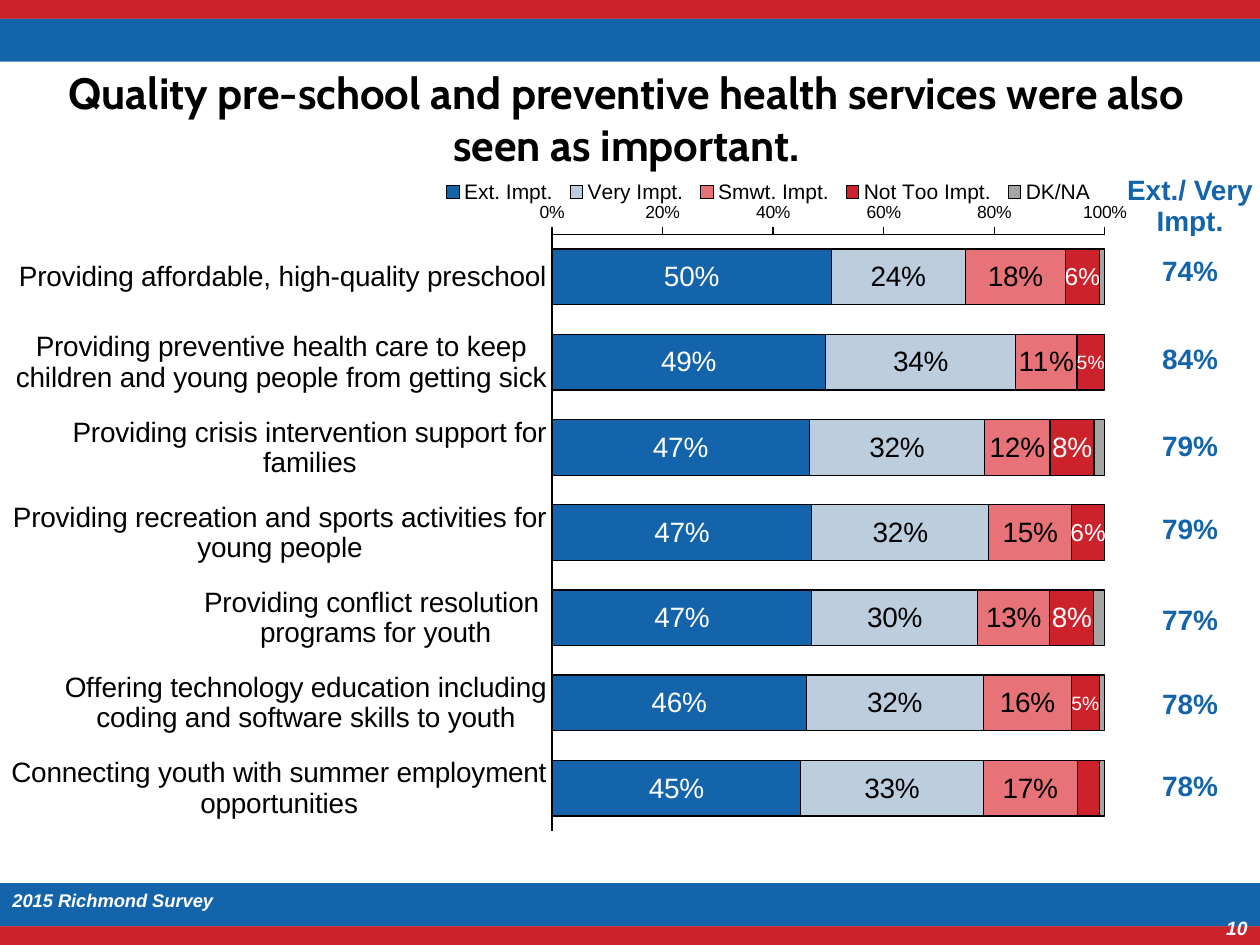
from lxml import etree
from pptx import Presentation
from pptx.chart.data import CategoryChartData
from pptx.dml.color import RGBColor
from pptx.enum.chart import (XL_AXIS_CROSSES, XL_CHART_TYPE, XL_LABEL_POSITION,
                             XL_LEGEND_POSITION, XL_TICK_MARK)
from pptx.enum.shapes import MSO_SHAPE
from pptx.enum.text import MSO_ANCHOR, PP_ALIGN
from pptx.oxml.ns import qn
from pptx.util import Pt

RECT = MSO_SHAPE.RECTANGLE
LEFT, CENTER, RIGHT = PP_ALIGN.LEFT, PP_ALIGN.CENTER, PP_ALIGN.RIGHT
BOTTOM = MSO_ANCHOR.BOTTOM
STACKED = XL_CHART_TYPE.BAR_STACKED_100
MIDDLE = XL_LABEL_POSITION.CENTER
TOP = XL_LEGEND_POSITION.TOP
NONE, OUT = XL_TICK_MARK.NONE, XL_TICK_MARK.OUTSIDE
MAX = XL_AXIS_CROSSES.MAXIMUM

RED, BLUE, WHITE, BLACK = "CC222B", "1464AC", "FFFFFF", "000000"

ITEMS = [
    "Providing affordable, high-quality preschool",
    "Providing preventive health care to keep children and young people from getting sick",
    "Providing crisis intervention support for families",
    "Providing recreation and sports activities for young people",
    "Providing conflict resolution \nprograms for youth",
    "Offering technology education including coding and software skills to youth",
    "Connecting youth with summer employment opportunities",
]
SERIES = [
    ("Ext. Impt.", BLUE, WHITE, (0.5, 0.49, 0.47, 0.47, 0.47, 0.46, 0.45)),
    ("Very Impt.", "BCCDDE", BLACK, (0.24, 0.34, 0.32, 0.32, 0.3, 0.32, 0.33)),
    ("Smwt. Impt.", "E77379", BLACK, (0.18, 0.11, 0.12, 0.15, 0.13, 0.16, 0.17)),
    ("Not Too Impt.", RED, WHITE, (0.06, 0.05, 0.08, 0.06, 0.08, 0.05, 0.04)),
    ("DK/NA", "A5A5A5", None, (0.01, 0, 0.02, 0, 0.02, 0.01, 0.01)),
]
SMALL = {0: 14, 1: 11, 3: 14, 5: 11}
TOTALS = [("Ext./ Very Impt.", 52), ("74%", 29), ("84%", 50), ("79%", 50),
          ("79%", 47), ("77%", 52), ("78%", 48), ("78%", 47)]


def tint(code):
    return RGBColor.from_string(code)


def place(parent, index, inner, **box):
    for old in parent.findall(qn("c:layout")):
        parent.remove(old)
    layout = etree.Element(qn("c:layout"))
    manual = etree.SubElement(layout, qn("c:manualLayout"))
    if inner:
        etree.SubElement(manual, qn("c:layoutTarget")).set("val", "inner")
    for side in "xy":
        etree.SubElement(manual, qn(f"c:{side}Mode")).set("val", "edge")
    for side, value in box.items():
        etree.SubElement(manual, qn(f"c:{side}")).set("val", str(value))
    parent.insert(index, layout)


class Deck:
    """Holds the style and the current slide."""

    def __init__(self):
        self.show = Presentation()
        self.show.slide_width, self.show.slide_height = Pt(720), Pt(540)
        self.slide = self.show.slides.add_slide(self.show.slide_layouts[6])
        self.shapes = self.slide.shapes
        self.face = "Arial"

    def back(self, color):
        fill = self.slide.background.fill
        fill.solid()
        fill.fore_color.rgb = tint(color)

    def font(self, font, size, color, bold=False, italic=False, face=None):
        font.name, font.size = face or self.face, Pt(size)
        font.bold, font.italic = bold, italic
        font.color.rgb = tint(color)

    def band(self, top, height, color):
        shape = self.shapes.add_shape(RECT, 0, Pt(top), Pt(720), Pt(height))
        shape.shadow.inherit = False
        shape.fill.solid()
        shape.fill.fore_color.rgb = tint(color)
        shape.line.fill.background()

    def text(self, words, box, align, size, color, **style):
        frame = self.shapes.add_textbox(*map(Pt, box)).text_frame
        frame.word_wrap = True
        frame.text = words
        para = frame.paragraphs[0]
        para.alignment = align
        self.font(para.runs[0].font, size, color, bold=True, **style)

    def table(self, rows, left, top, width):
        height = sum(size for _, size in rows)
        table = self.shapes.add_table(len(rows), 1, Pt(left), Pt(top),
                                      Pt(width), Pt(height)).table
        table.first_row = table.horz_banding = False
        for row, (words, size) in zip(table.rows, rows):
            row.height = Pt(size)
            cell = row.cells[0]
            cell.fill.background()
            cell.vertical_anchor = BOTTOM
            cell.margin_left = cell.margin_right = cell.margin_top = Pt(1)
            cell.margin_bottom = 0
            cell.text = words
            para = cell.text_frame.paragraphs[0]
            para.alignment = CENTER
            self.font(para.runs[0].font, 16, BLUE, bold=True)

    def line(self, line):
        line.width = Pt(0.75)
        line.color.rgb = tint(BLACK)

    def axis(self, axis, size, tick):
        axis.has_major_gridlines = False
        axis.major_tick_mark, axis.minor_tick_mark = tick, NONE
        self.font(axis.tick_labels.font, size, BLACK)
        self.line(axis.format.line)

    def label(self, series, color):
        labels = series.data_labels
        labels.show_value = True
        labels.number_format, labels.number_format_is_linked = "0%", False
        labels.position = MIDDLE
        self.font(labels.font, 16, color)

    def chart(self, items, rows, box):
        data = CategoryChartData(number_format="0%")
        data.categories = items
        for name, _, _, values in rows:
            data.add_series(name, values)
        chart = self.shapes.add_chart(STACKED, *map(Pt, box), data).chart
        chart.has_title = False
        self.font(chart.font, 18, BLACK)
        plot = chart.plots[0]
        plot.gap_width, plot.overlap = 53, 100
        plot.vary_by_categories = False
        for series, (_, color, ink, _) in zip(plot.series, rows):
            series.format.fill.solid()
            series.format.fill.fore_color.rgb = tint(color)
            self.line(series.format.line)
            if ink:
                self.label(series, ink)

        cat, val = chart.category_axis, chart.value_axis
        self.axis(cat, 16, NONE)
        self.axis(val, 10, OUT)
        cat.reverse_order = True
        cat.crosses = MAX
        val.minimum_scale, val.maximum_scale, val.major_unit = 0, 1, 0.2
        val.tick_labels.number_format = "0%"
        val.tick_labels.number_format_is_linked = False

        chart.has_legend = True
        legend = chart.legend
        legend.position, legend.include_in_layout = TOP, False
        self.font(legend.font, 12, BLACK)
        place(legend._element, 1, False, x=0.37, y=0.01, w=0.58, h=0.04)
        area = chart._chartSpace.find(".//" + qn("c:plotArea"))
        place(area, 0, True, x=0.471, y=0.091, w=0.483, h=0.863)
        return plot

    def shrink(self, series, sizes, hidden):
        for index, size in sizes.items():
            label = series.points[index].data_label
            self.font(label.font, size, WHITE)
            label.position = MIDDLE
        label = series.points[hidden].data_label._get_or_add_dLbl()
        label.find(qn("c:showVal")).set("val", "0")


def main():
    deck = Deck()
    deck.back(RED)
    deck.band(10.8, 518.4, WHITE)
    for top in (10.8, 504.7):
        deck.band(top, 24.5, BLUE)
    deck.text("10", (628.6, 519.8, 91.4, 20), RIGHT, 11, WHITE, italic=True)
    deck.text("Quality pre-school and preventive health services were also seen as important.",
              (6.5, 33.8, 702.7, 84.2), CENTER, 25, BLACK, face="Cabin")
    deck.table(TOTALS, 643, 83.5, 74)
    plot = deck.chart(ITEMS, SERIES, (6.5, 98, 655, 395))
    deck.shrink(plot.series[3], SMALL, 6)
    deck.text("2015 Richmond Survey", (0, 504.7, 697, 25), LEFT, 10.5, WHITE, italic=True)
    deck.show.save("out.pptx")


if __name__ == "__main__":
    main()
